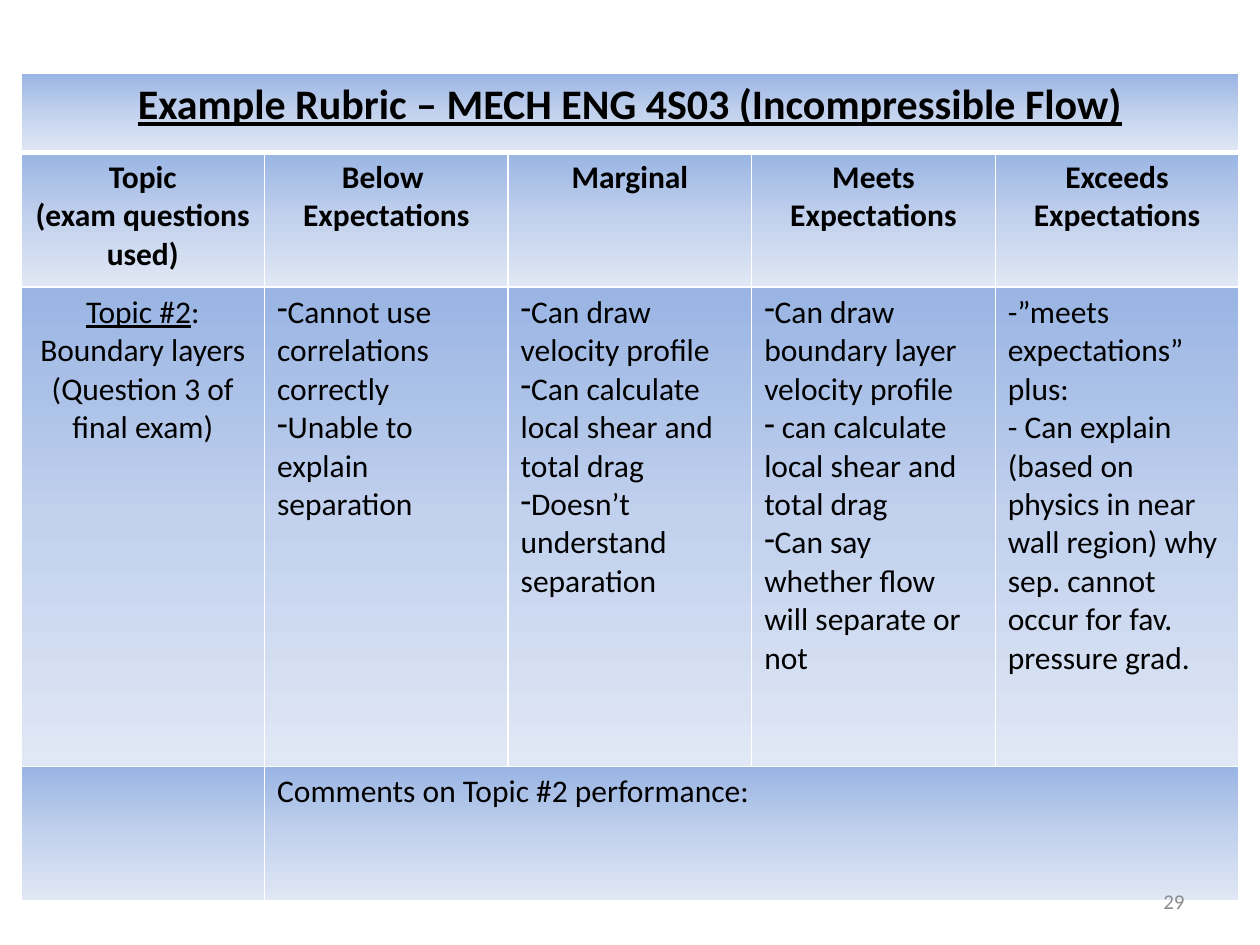
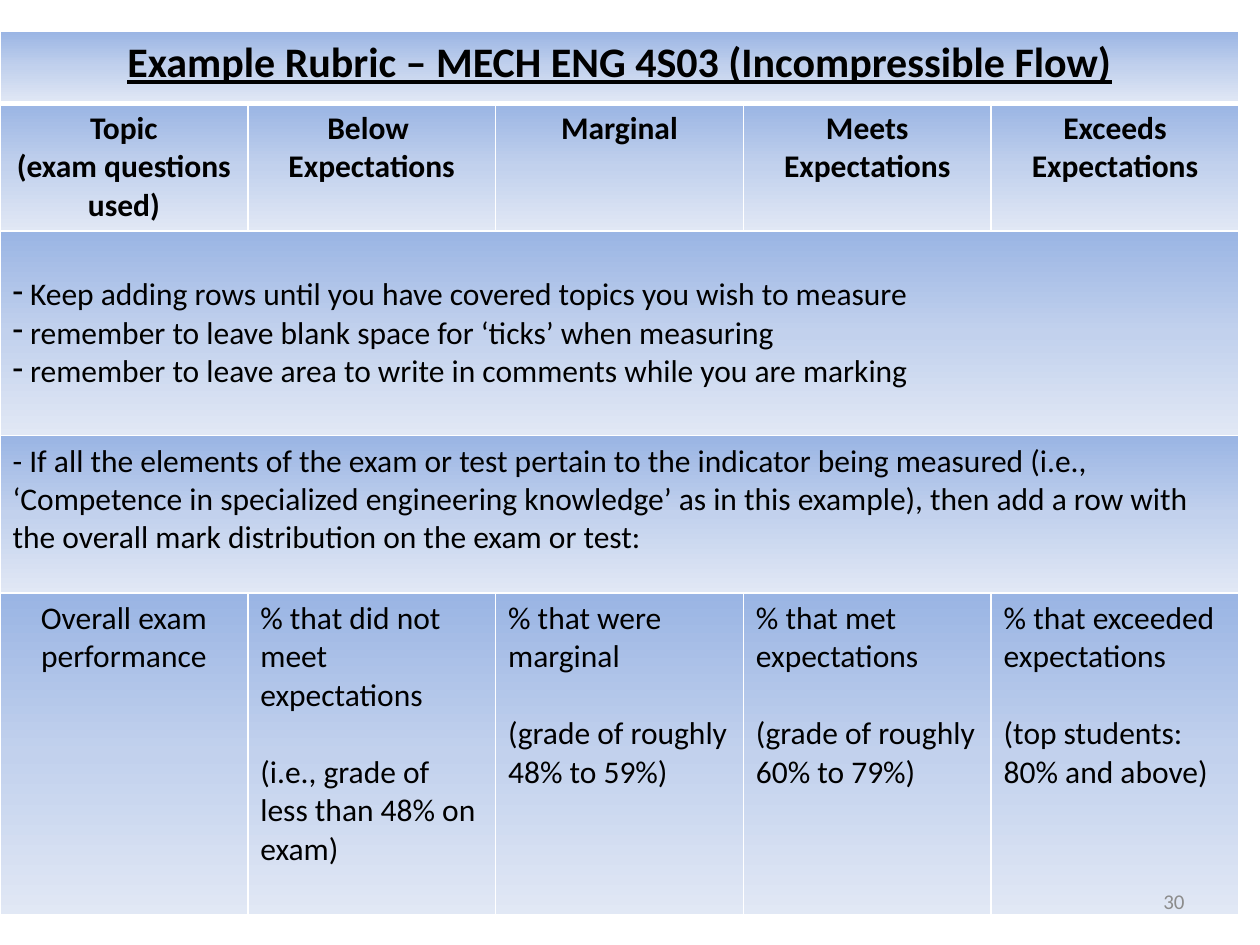
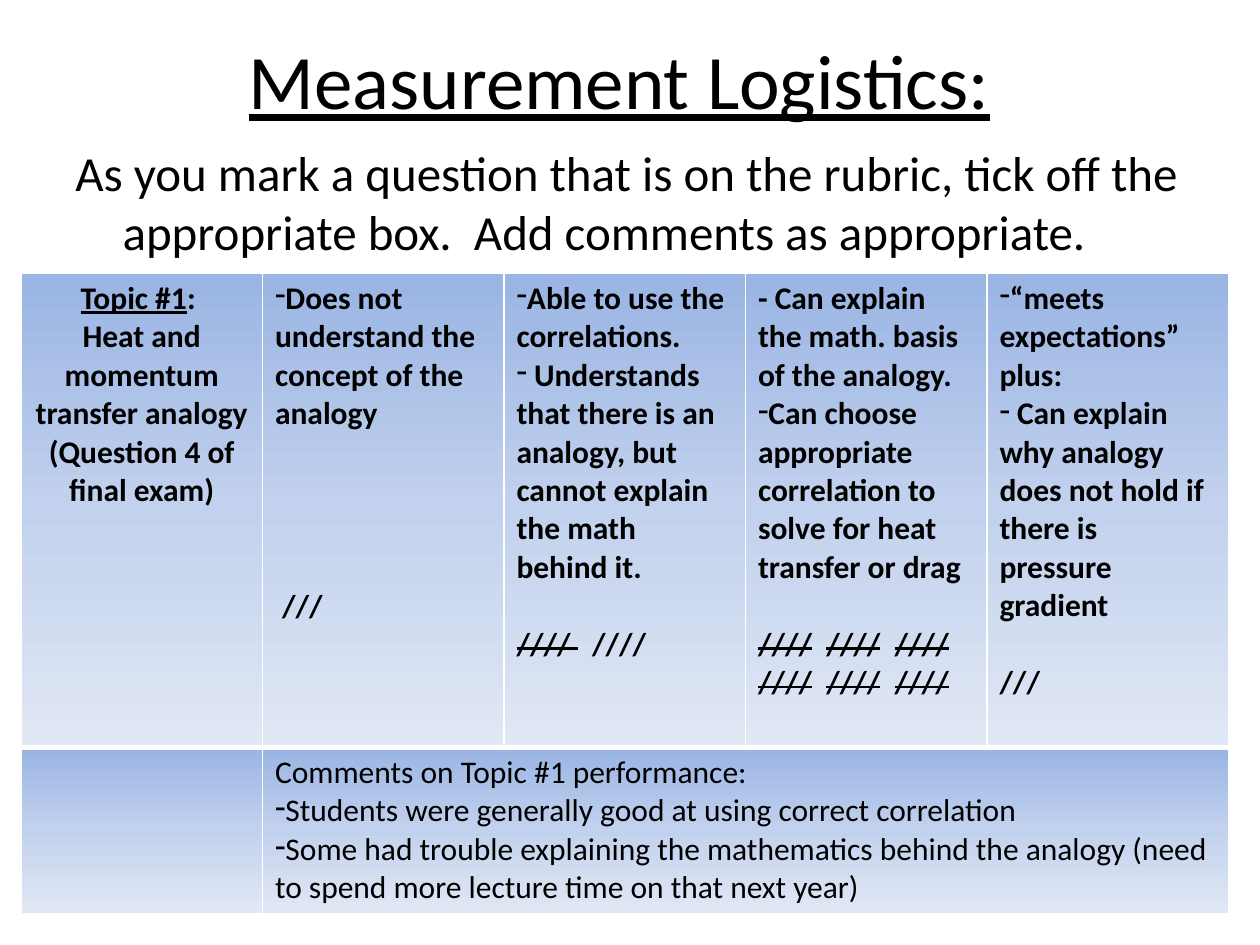
import pptx
import pptx.dml.color
import pptx.enum.text
import pptx.oxml
import pptx.oxml.ns
import pptx.util

Pt = pptx.util.Pt
ALIGN = pptx.enum.text.PP_ALIGN
MIDDLE = pptx.enum.text.MSO_ANCHOR.MIDDLE
NAMESPACE = pptx.oxml.ns.nsdecls("a")
FONT = "Calibri"
BLACK = "000000"
GREY = "8C8C8C"
WHITE = "FFFFFF"
GRADIENT = [(0, "9AB5E4"), (50, "C2D1ED"), (100, "E1E8F5")]
COLUMNS = 5
LINE = 22


def set_font(font, size, color):
    font.name = FONT
    font.size = Pt(size)
    font.color.rgb = pptx.dml.color.RGBColor.from_string(color)


def add_xml(parent, xml):
    parent.append(pptx.oxml.parse_xml(xml))


stops = "".join(
    f'<a:gs pos="{position * 1000}"><a:srgbClr val="{color}"/></a:gs>'
    for position, color in GRADIENT
)
gradient_xml = (
    f'<a:gradFill {NAMESPACE} rotWithShape="1"><a:gsLst>{stops}</a:gsLst>'
    '<a:lin ang="5400000" scaled="0"/></a:gradFill>'
)

heading_rows = [
    [["_Example Rubric – MECH ENG 4S03 (Incompressible Flow)_"]],
    [
        ["Topic", "(exam questions used)"],
        ["Below ", "Expectations"],
        ["Marginal"],
        ["Meets", "Expectations"],
        ["Exceeds", "Expectations"],
    ],
]

boundary_rows = heading_rows + [
    [
        ["_Topic #2_: Boundary layers", "(Question 3 of final exam)"],
        ["*Cannot use correlations correctly", "*Unable to explain separation"],
        [
            "*Can draw velocity profile",
            "*Can calculate local shear and total drag",
            "*Doesn’t understand separation",
        ],
        [
            "*Can draw boundary layer velocity profile",
            "* can calculate local shear and total drag",
            "*Can say whether flow will separate or not",
        ],
        [
            "-”meets expectations” plus:",
            "- Can explain (based on physics in near wall region) why sep. "
            "cannot occur for fav. pressure grad.",
        ],
    ],
    [[], ["Comments on Topic #2 performance:"]],
]

overall_rows = heading_rows + [
    [[
        "* Keep adding rows until you have covered topics you wish to measure",
        "* remember to leave blank space for ‘ticks’ when measuring",
        "* remember to leave area to write in comments while you are marking",
    ]],
    [[
        "- If all the elements of the exam or test pertain to the indicator "
        "being measured (i.e., ‘Competence in specialized engineering "
        "knowledge’ as in this example), then add a row with the overall "
        "mark distribution on the exam or test:",
    ]],
    [
        ["Overall exam performance"],
        ["% that did not meet expectations", ">(i.e., grade of less than 48% on exam)"],
        ["% that were marginal", ">(grade of roughly 48% to 59%)"],
        ["% that met expectations", ">(grade of roughly 60% to 79%)"],
        ["% that exceeded expectations", ">(top students: 80% and above)"],
    ],
]

analogy_rows = [
    [
        [
            "_Topic #1_: ",
            "Heat and momentum transfer analogy (Question 4 of final exam)",
        ],
        ["*Does not understand the concept of the analogy", ">>>> ///"],
        [
            "*Able to use the correlations.",
            "* Understands that there is an analogy, but cannot explain the "
            "math behind it.",
            ">~//// ~  ////",
        ],
        [
            "- Can explain the math. basis of the analogy.",
            "*Can choose appropriate correlation to solve for heat transfer or drag",
            ">~////~  ~////~  ~////~  ",
            "~////~  ~////~  ~////~",
        ],
        [
            "*“meets expectations” plus:",
            "* Can explain why analogy does not hold if there is pressure gradient",
            ">///",
        ],
    ],
    [
        [],
        [
            "Comments on Topic #1 performance:",
            "*Students were generally good at using correct correlation",
            "*Some had trouble explaining the mathematics behind the analogy "
            "(need to spend more lecture time on that next year)",
        ],
    ],
]

slides = [
    {"left": 12, "top": 42, "column": 139.2, "heights": [45, 77, 274, 77],
     "rows": boundary_rows, "headings": 2, "bold": 2, "number": "29"},
    {"left": 0, "top": 18, "column": 141.6, "heights": [41, 73, 117, 90, 184],
     "rows": overall_rows, "headings": 2, "bold": 2, "number": "30"},
    {"left": 12, "top": 156, "column": 138, "heights": [271, 95],
     "rows": analogy_rows, "headings": 0, "bold": 1, "number": None},
]

deck = pptx.Presentation()
deck.slide_width = Pt(720)
deck.slide_height = Pt(540)

for slide in slides:
    number = slide["number"]
    page = deck.slides.add_slide(deck.slide_layouts[6 if number else 5])

    if not number:
        title = page.shapes.title
        title.left, title.top, title.width, title.height = Pt(30), Pt(0), Pt(648), Pt(90)
        title.text_frame.text = "Measurement Logistics:"
        title.text_frame.vertical_anchor = MIDDLE
        para = title.text_frame.paragraphs[0]
        para.alignment = ALIGN.CENTER
        set_font(para.font, 44, BLACK)
        para.runs[0].font.underline = True

        box = page.shapes.add_textbox(Pt(36), Pt(78), Pt(648), Pt(90))
        box.text_frame.word_wrap = True
        para = box.text_frame.paragraphs[0]
        para.text = (
            "As you mark a question that is on the rubric, tick off the "
            "appropriate box.  Add comments as appropriate."
        )
        set_font(para.font, 28, BLACK)
        indents = para._p.get_or_add_pPr()
        indents.set("marL", str(Pt(27)))
        indents.set("indent", str(Pt(-27)))

    rows, heights = slide["rows"], slide["heights"]
    table = page.shapes.add_table(
        len(rows), COLUMNS, Pt(slide["left"]), Pt(slide["top"]),
        Pt(slide["column"] * COLUMNS), Pt(sum(heights)),
    ).table
    table.first_row = False
    table.horz_banding = False
    for column in table.columns:
        column.width = Pt(slide["column"])

    for row_index, (row, height) in enumerate(zip(rows, heights)):
        table.rows[row_index].height = Pt(height)
        if len(row) < COLUMNS:
            table.cell(row_index, len(row) - 1).merge(table.cell(row_index, COLUMNS - 1))

        for column_index in range(COLUMNS):
            properties = table.cell(row_index, column_index)._tc.get_or_add_tcPr()
            for side in ("lnL", "lnR", "lnT", "lnB"):
                thick = (row_index, side) in ((0, "lnB"), (1, "lnT"))
                add_xml(
                    properties,
                    f'<a:{side} {NAMESPACE} w="{Pt(3 if thick else 1)}"><a:solidFill>'
                    f'<a:srgbClr val="{WHITE}"/></a:solidFill></a:{side}>',
                )
            add_xml(properties, gradient_xml)

        for column_index, texts in enumerate(row):
            cell = table.cell(row_index, column_index)
            heading = row_index < slide["headings"]
            centered = heading or (column_index == 0 and not cell.is_merge_origin)
            if len(row) == 1 and len(texts) > 1:
                cell.vertical_anchor = MIDDLE
            for text_index, text in enumerate(texts):
                frame = cell.text_frame
                para = frame.add_paragraph() if text_index else frame.paragraphs[0]
                para.alignment = ALIGN.CENTER if centered else ALIGN.LEFT
                set_font(para.font, 24 if heading and row_index == 0 else 18, BLACK)
                content = text.lstrip(">")
                if content != text:
                    para.space_before = Pt(LINE * (len(text) - len(content)))
                if content.startswith("*"):
                    content = content[1:]
                    bullet = para._p.get_or_add_pPr()
                    bullet.set("marL", "0")
                    bullet.set("indent", "0")
                    bullet.insert_element_before(
                        pptx.oxml.parse_xml(f'<a:buChar {NAMESPACE} char="-"/>'),
                        "a:tabLst", "a:defRPr", "a:extLst",
                    )
                mark = "~" if "~" in content else "_"
                for part_index, part in enumerate(content.split(mark)):
                    if not part:
                        continue
                    span = para.add_run()
                    span.text = part
                    span.font.bold = row_index < slide["bold"]
                    if part_index % 2 and mark == "_":
                        span.font.underline = True
                    elif part_index % 2:
                        span.font._element.set("strike", "sngStrike")

    if number:
        box = page.shapes.add_textbox(Pt(516), Pt(500.4), Pt(168), Pt(28.8))
        box.text_frame.word_wrap = True
        box.text_frame.vertical_anchor = MIDDLE
        para = box.text_frame.paragraphs[0]
        para.text = number
        para.alignment = ALIGN.RIGHT
        set_font(para.font, 12, GREY)

deck.save("out.pptx")
